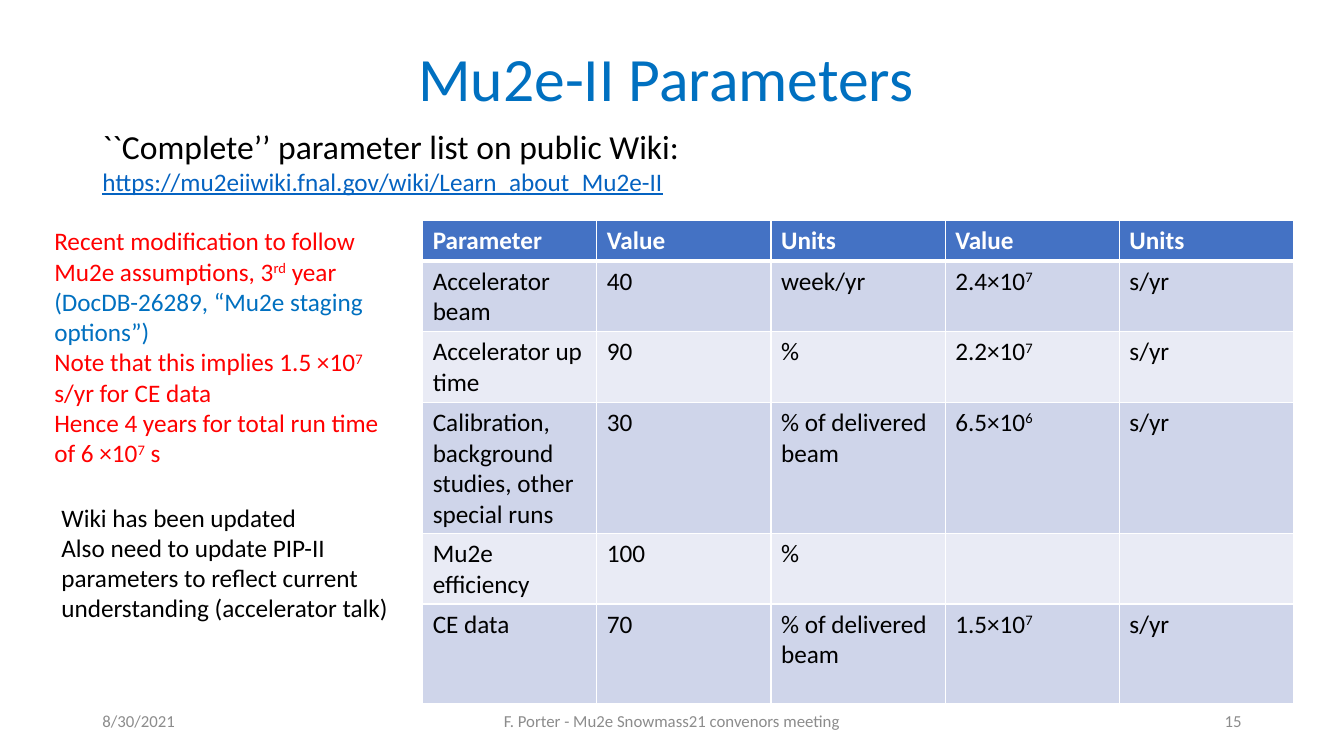
import pptx
import pptx.util
import pptx.dml.color
import pptx.enum.text
import pptx.oxml.ns
from lxml import etree

RGBColor = pptx.dml.color.RGBColor
ALIGN = pptx.enum.text.PP_ALIGN
ANCHOR = pptx.enum.text.MSO_ANCHOR

BLUE = RGBColor(0x00, 0x70, 0xC0)
LINK = RGBColor(0x05, 0x63, 0xC1)
RED = RGBColor(0xFF, 0x00, 0x00)
BLACK = RGBColor(0x00, 0x00, 0x00)
WHITE = RGBColor(0xFF, 0xFF, 0xFF)
GREY = RGBColor(0x8C, 0x8C, 0x8C)
HEADER = RGBColor(0x44, 0x72, 0xC4)
BANDS = (RGBColor(0xCF, 0xD5, 0xEA), RGBColor(0xE9, 0xEB, 0xF5))

SLIDE_WIDTH = pptx.util.Inches(13.333)
SLIDE_HEIGHT = pptx.util.Inches(7.5)

# Text between carets is raised
PARAMETERS = [
    ("Parameter", "Value", "Units", "Value", "Units"),
    ("Accelerator beam", "40", "week/yr", "2.4×10^7", "s/yr"),
    ("Accelerator up time", "90", "%", "2.2×10^7", "s/yr"),
    ("Calibration, background studies, other special runs", "30",
     "% of delivered beam", "6.5×10^6", "s/yr"),
    ("Mu2e efficiency", "100", "%", "", ""),
    ("CE data", "70", "% of delivered beam", "1.5×10^7", "s/yr"),
]
ROW_HEIGHTS = (5.07, 8.8, 8.8, 16.27, 8.8, 13.2)
COLUMN_WIDTH = 12.96


def across(percent):
    return int(SLIDE_WIDTH * percent / 100)


def down(percent):
    return int(SLIDE_HEIGHT * percent / 100)


def write(para, text, size, colour, bold=False):
    """Fill a paragraph, raising every second piece between carets."""
    first, *others = text.split("^")
    para.text = first
    for piece in others:
        para.add_run().text = piece
    for index, span in enumerate(para.runs):
        font = span.font
        font.name = "Calibri"
        font.size = pptx.util.Pt(size)
        font.bold = bold
        font.color.rgb = colour
        if index % 2:
            font._element.set("baseline", "30000")


def add_text(page, area, lines, align=ALIGN.LEFT, anchor=ANCHOR.TOP):
    """Add a text box; each line is (text, size, colour)."""
    left, top, width, height = area
    box = page.shapes.add_textbox(across(left), down(top), across(width), down(height))
    frame = box.text_frame
    frame.word_wrap = True
    frame.vertical_anchor = anchor
    for index, line in enumerate(lines):
        para = frame.add_paragraph() if index else frame.paragraphs[0]
        write(para, *line)
        para.alignment = align
    return frame


def set_borders(cell, top, bottom):
    """Draw white cell edges, placed ahead of the fill as the schema asks."""
    properties = cell._tc.get_or_add_tcPr()
    edges = (("a:lnL", 1), ("a:lnR", 1), ("a:lnT", top), ("a:lnB", bottom))
    for index, (tag, points) in enumerate(edges):
        edge = etree.Element(pptx.oxml.ns.qn(tag), w=str(pptx.util.Pt(points)))
        fill = etree.SubElement(edge, pptx.oxml.ns.qn("a:solidFill"))
        etree.SubElement(fill, pptx.oxml.ns.qn("a:srgbClr"), val=str(WHITE))
        properties.insert(index, edge)


def add_parameter_table(page):
    rows, columns = len(PARAMETERS), len(PARAMETERS[0])
    table = page.shapes.add_table(
        rows, columns, across(31.45), down(29.2),
        across(COLUMN_WIDTH * columns), down(sum(ROW_HEIGHTS))).table
    for column in table.columns:
        column.width = across(COLUMN_WIDTH)
    for row, values in enumerate(PARAMETERS):
        table.rows[row].height = down(ROW_HEIGHTS[row])
        is_header = row == 0
        for column, value in enumerate(values):
            cell = table.cell(row, column)
            cell.fill.solid()
            cell.fill.fore_color.rgb = HEADER if is_header else BANDS[(row - 1) % 2]
            set_borders(cell, 3 if row == 1 else 1, 3 if is_header else 1)
            if value:
                write(cell.text_frame.paragraphs[0], value, 18,
                      WHITE if is_header else BLACK, is_header)


def add_footer(page):
    footers = [
        (6.88, 22.5, "8/30/2021", ALIGN.LEFT),
        (33.12, 33.75, "F. Porter - Mu2e Snowmass21 convenors meeting", ALIGN.CENTER),
        (70.62, 22.5, "15", ALIGN.RIGHT),
    ]
    for left, width, text, align in footers:
        add_text(page, (left, 92.67, width, 5.32), [(text, 12, GREY)],
                 align, ANCHOR.MIDDLE)


def main():
    deck = pptx.Presentation()
    deck.slide_width = SLIDE_WIDTH
    deck.slide_height = SLIDE_HEIGHT
    page = deck.slides.add_slide(deck.slide_layouts[6])

    # Title and introduction
    title = add_text(page, (30.38, 4.53, 45.6, 12.4),
                     [("Mu2e-II Parameters", 44, BLUE)], anchor=ANCHOR.MIDDLE)
    title.paragraphs[0].line_spacing = 0.9
    intro = add_text(page, (6.88, 16, 82.43, 14.8), [
        ("``Complete’’ parameter list on public Wiki:", 24, BLACK),
        ("https://mu2eiiwiki.fnal.gov/wiki/Learn_about_Mu2e-II", 18, LINK),
    ])
    intro.paragraphs[1].runs[0].font.underline = True

    add_footer(page)
    add_parameter_table(page)

    # Notes beside the table
    add_text(page, (3.3, 29.2, 27.53, 33.6), [
        ("Recent modification to follow Mu2e assumptions, 3^rd^ year", 18, RED),
        ("(DocDB-26289, “Mu2e staging options”)", 18, BLUE),
        ("Note that this implies 1.5 ×10^7 ^s/yr for CE data", 18, RED),
        ("Hence 4 years for total run time of 6 ×10^7^ s", 18, RED),
    ])
    add_text(page, (3.83, 65.73, 26.55, 17.47), [
        ("Wiki has been updated", 18, BLACK),
        ("Also need to update PIP-II parameters to reflect current "
         "understanding (accelerator talk)", 18, BLACK),
    ])
    deck.save("out.pptx")


if __name__ == "__main__":
    main()
